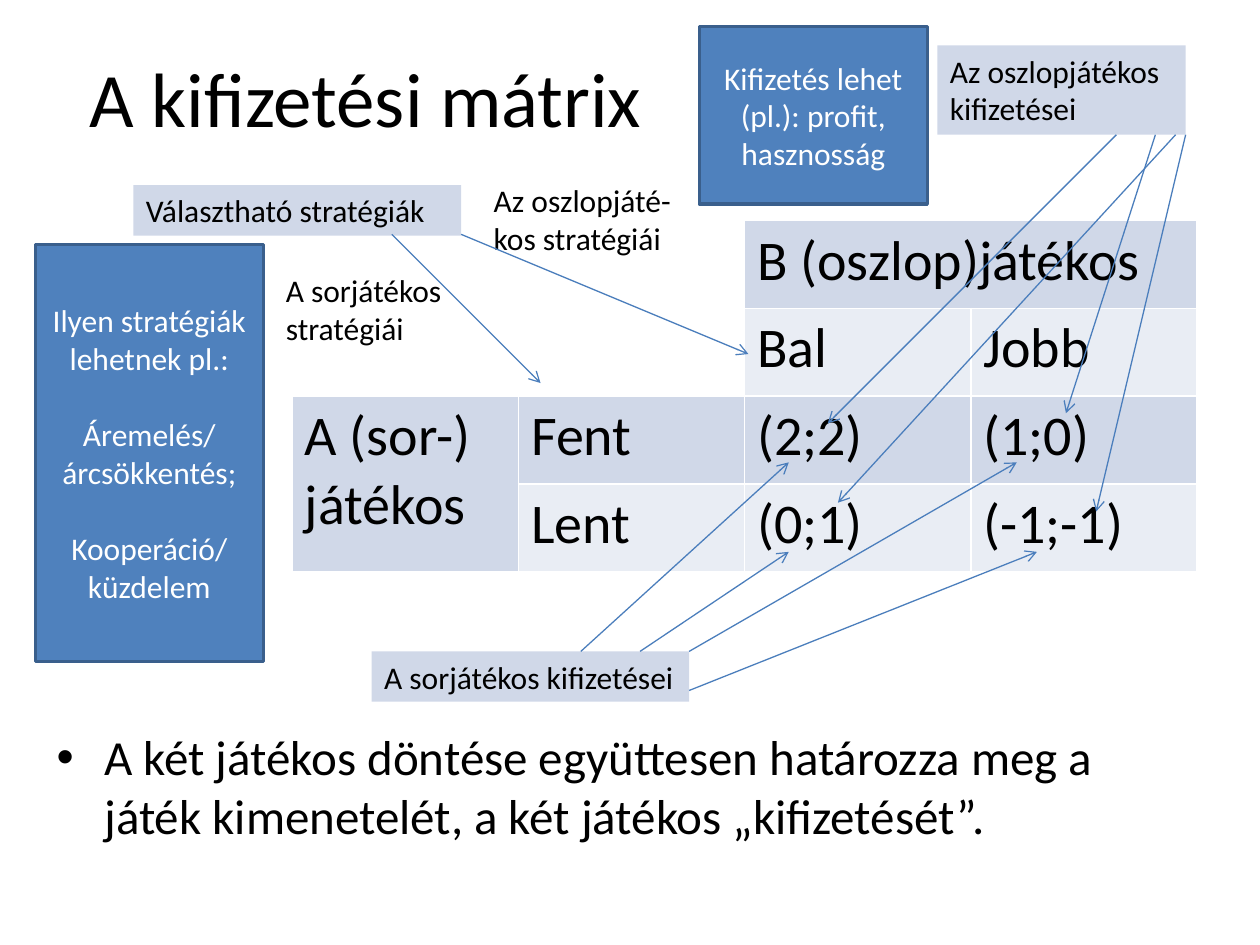
from dataclasses import dataclass

from lxml.etree import SubElement
from pptx import Presentation
from pptx.dml.color import RGBColor
from pptx.enum.shapes import MSO_CONNECTOR as Connector, MSO_SHAPE as Shape
from pptx.enum.text import MSO_ANCHOR as Anchor, PP_ALIGN as Align
from pptx.oxml.ns import qn
from pptx.util import Inches, Pt

FONT = "Calibri"
BLACK, WHITE = "000000", "FFFFFF"
BLUE, BLUE_EDGE, ARROW_BLUE = "4F81BD", "3A5F8C", "4B7EBC"
BAND_DARK, BAND_LIGHT = "D0D8E8", "E9EDF4"


@dataclass
class Label:
    text: str
    left: float
    top: float
    width: float
    height: float
    fill: str | None = None


@dataclass
class Arrow:
    start: tuple[float, float]
    end: tuple[float, float]


def color(value: str) -> RGBColor:
    return RGBColor.from_string(value)


def write(frame, text: str, *, size: float = 18, ink: str = BLACK, align=Align.LEFT,
          anchor=Anchor.TOP, gap: float = 0) -> None:
    """Write one paragraph per line of text, with gap points between them."""
    frame.word_wrap = True
    frame.vertical_anchor = anchor
    for index, line in enumerate(text.split("\n")):
        para = frame.paragraphs[0] if index == 0 else frame.add_paragraph()
        para.alignment = align
        if index and gap:
            para.space_before = Pt(gap)
        span = para.add_run()
        span.text = line
        span.font.name, span.font.size = FONT, Pt(size)
        span.font.color.rgb = color(ink)


def add_label(page, label: Label):
    area = [Inches(v) for v in (label.left, label.top, label.width, label.height)]
    if label.fill is None:
        box = page.shapes.add_textbox(*area)
    else:
        box = page.shapes.add_shape(Shape.RECTANGLE, *area)
        box.shadow.inherit = False
        box.fill.solid()
        box.fill.fore_color.rgb = color(label.fill)
        box.line.fill.background()
    return box


def add_example(page, label: Label) -> None:
    box = add_label(page, label)
    box.line.color.rgb = color(BLUE_EDGE)
    box.line.width = Pt(2)
    write(box.text_frame, label.text, ink=WHITE, align=Align.CENTER,
          anchor=Anchor.MIDDLE, gap=22)


def add_arrow(page, arrow: Arrow) -> None:
    ends = [Inches(v) for v in (*arrow.start, *arrow.end)]
    line = page.shapes.add_connector(Connector.STRAIGHT, *ends)
    line.line.color.rgb = color(ARROW_BLUE)
    line.line.width = Pt(0.75)
    SubElement(line.line._get_or_add_ln(), qn("a:tailEnd"), type="arrow")
    SubElement(line._element.spPr, qn("a:effectLst"))


def add_borders(cell) -> None:
    props = cell._tc.get_or_add_tcPr()
    for side in ("lnL", "lnR", "lnT", "lnB"):
        edge = SubElement(props, qn(f"a:{side}"), w=str(Pt(1)))
        SubElement(SubElement(edge, qn("a:solidFill")), qn("a:srgbClr"), val=WHITE)


def add_matrix(page) -> None:
    rows = [
        ["", "", "B (oszlop)játékos", ""],
        ["", "", "Bal", "Jobb"],
        ["A (sor-) játékos", "Fent", "(2;2)", "(1;0)"],
        ["", "Lent", "(0;1)", "(-1;-1)"],
    ]
    table = page.shapes.add_table(4, 4, Inches(2.32), Inches(1.75),
                                  Inches(7.18), Inches(2.79)).table
    table.first_row = table.horz_banding = False
    for first, last in (((0, 0), (1, 1)), ((0, 2), (0, 3)), ((2, 0), (3, 0))):
        table.cell(*first).merge(table.cell(*last))
    for r, row in enumerate(rows):
        for c, text in enumerate(row):
            cell = table.cell(r, c)
            add_borders(cell)
            if text:
                cell.fill.solid()
                cell.fill.fore_color.rgb = color(BAND_LIGHT if r % 2 else BAND_DARK)
                write(cell.text_frame, text, size=32)
            else:
                cell.fill.background()


def add_conclusion(page) -> None:
    text = ("A két játékos döntése együttesen határozza meg a játék kimenetelét, "
            "a két játékos „kifizetését”.")
    box = add_label(page, Label(text, 0.35, 5.72, 8.99, 1.34))
    write(box.text_frame, text, size=28)
    para = box.text_frame.paragraphs[0]
    para.space_before = Pt(5.6)
    props = para._p.get_or_add_pPr()
    props.set("marL", str(Inches(0.38)))
    props.set("indent", str(Inches(-0.38)))
    SubElement(props, qn("a:buFont"), typeface="Arial")
    SubElement(props, qn("a:buChar"), char="•")


LABELS = [
    Label("Választható stratégiák", 1.06, 1.47, 2.6, 0.4, BAND_DARK),
    Label("A sorjátékos stratégiái", 2.17, 2.1, 2.2, 0.71),
    Label("Az oszlopjáté- kos stratégiái", 3.82, 1.39, 1.97, 0.71),
    Label("A sorjátékos kifizetései", 2.95, 5.17, 2.52, 0.4, BAND_DARK),
    Label("Az oszlopjátékos kifizetései", 7.44, 0.36, 1.97, 0.71, BAND_DARK),
]
ARROWS = [
    # From the strategies label
    Arrow((3.11, 1.86), (4.29, 3.04)),
    Arrow((3.66, 1.86), (5.94, 2.81)),
    # From the row player's payoffs
    Arrow((4.61, 5.17), (6.26, 3.67)),
    Arrow((5.08, 5.17), (6.26, 4.38)),
    Arrow((5.47, 5.17), (8.07, 3.67)),
    Arrow((5.47, 5.48), (8.23, 4.38)),
    # From the column player's payoffs
    Arrow((8.86, 1.07), (6.57, 3.36)),
    Arrow((9.33, 1.07), (6.65, 3.99)),
    Arrow((9.17, 1.07), (8.46, 3.28)),
    Arrow((9.41, 1.07), (8.7, 4.06)),
]
EXAMPLES = [
    Label("Ilyen stratégiák lehetnek pl.:\nÁremelés/ árcsökkentés;\nKooperáció/ küzdelem",
          0.28, 1.94, 1.81, 3.31, BLUE),
    Label("Kifizetés lehet (pl.): profit, hasznosság", 5.55, 0.21, 1.81, 1.41, BLUE),
]


def main() -> None:
    deck = Presentation()
    deck.slide_width, deck.slide_height = Inches(10), Inches(7.5)
    page = deck.slides.add_slide(deck.slide_layouts[5])

    # Title
    title = page.shapes.title
    title.left, title.top = Inches(0.5), Inches(0.3)
    title.width, title.height = Inches(4.81), Inches(0.93)
    write(title.text_frame, "A kifizetési mátrix", size=44, align=Align.CENTER,
          anchor=Anchor.MIDDLE)

    # Conclusion and payoff matrix
    add_conclusion(page)
    add_matrix(page)

    # Labels, arrows and example boxes
    for label in LABELS:
        write(add_label(page, label).text_frame, label.text)
    for arrow in ARROWS:
        add_arrow(page, arrow)
    for example in EXAMPLES:
        add_example(page, example)

    deck.save("out.pptx")


if __name__ == "__main__":
    main()
